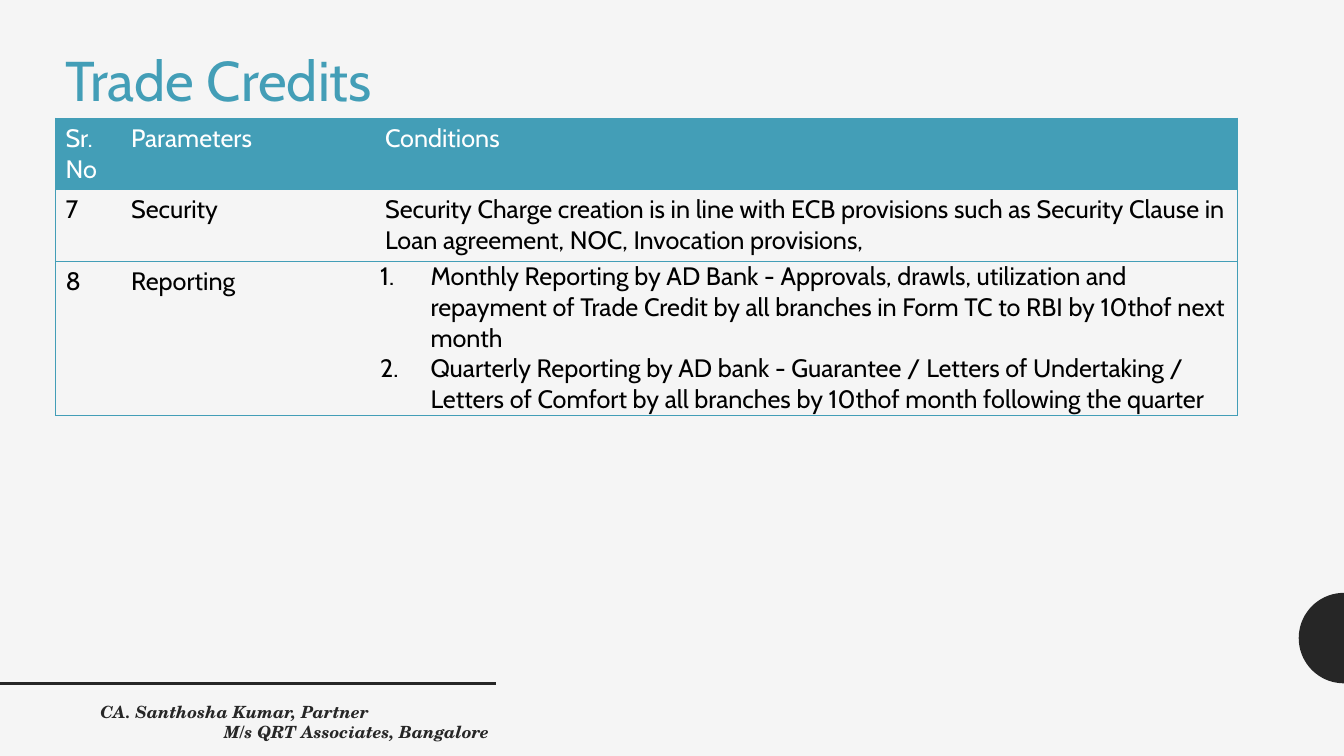
from math import cos, pi, sin

from lxml import etree
from pptx import Presentation
from pptx.dml.color import RGBColor
from pptx.enum.shapes import MSO_CONNECTOR
from pptx.enum.text import MSO_AUTO_SIZE, PP_ALIGN
from pptx.oxml.ns import qn
from pptx.util import Cm, Pt

LINE = MSO_CONNECTOR.STRAIGHT
GROW = MSO_AUTO_SIZE.SHAPE_TO_FIT_TEXT
LEFT, RIGHT = PP_ALIGN.LEFT, PP_ALIGN.RIGHT
PLAIN = "{2D5ABB26-0587-4C30-8999-92F81FD0307C}"

HUES = {"back": "F5F5F5", "dark": "262626", "teal": "439EB7",
        "white": "FFFFFF", "black": "000000"}
TITLE = {"name": "Cabin", "size": Pt(40)}
BODY = {"name": "Cabin", "size": Pt(18), "bold": False}
FOOT = {"name": "TeX Gyre Schola", "size": Pt(12), "bold": True, "italic": True}

COLS = (1.65, 6.4, 21.74)
ROWS = (1.8, 1.8, 3.77)
TERMS = (
    (["Sr. No"], ["Parameters"], ["Conditions"]),
    (["7"], ["Security"],
     ["Security Charge creation is in line with ECB provisions such as "
      "Security Clause in Loan agreement, NOC, Invocation provisions,"]),
    (["8"], ["Reporting"],
     ["Monthly Reporting by AD Bank - Approvals, drawls, utilization and "
      "repayment of Trade Credit by all branches in Form TC to RBI by "
      "10thof next month",
      "Quarterly Reporting by AD bank - Guarantee / Letters of Undertaking / "
      "Letters of Comfort by all branches by 10thof month following the quarter"]),
)


def rgb(hue):
    return RGBColor.from_string(HUES[hue])


def write(frame, lines, form, hue):
    """Put each line in its own paragraph and style it."""
    frame.word_wrap = True
    for i, line in enumerate(lines):
        para = frame.add_paragraph() if i else frame.paragraphs[0]
        run = para.add_run()
        run.text = line
        for key, value in form.items():
            setattr(run.font, key, value)
        run.font.color.rgb = rgb(hue)


def add_text(slide, area, lines, form, hue):
    box = slide.shapes.add_textbox(*map(Cm, area))
    write(box.text_frame, lines, form, hue)
    return box.text_frame


def add_half(slide, x, y, radius, steps=36):
    """Draw a half disc that opens to the right, centred on x, y."""
    turns = [pi / 2 + pi * i / steps for i in range(steps + 1)]
    dots = [(Cm(x + radius * cos(t)), Cm(y + radius * sin(t))) for t in turns]
    path = slide.shapes.build_freeform(*dots[0])
    path.add_line_segments(dots[1:], close=True)
    disc = path.convert_to_shape()
    disc.shadow.inherit = False
    disc.fill.solid()
    disc.fill.fore_color.rgb = rgb("dark")
    disc.line.fill.background()


def add_rule(slide, x, y, end):
    rule = slide.shapes.add_connector(LINE, Cm(x), Cm(y), Cm(end), Cm(y))
    rule.line.color.rgb = rgb("dark")
    rule.line.width = Pt(2)
    etree.SubElement(rule._element.spPr, qn("a:effectLst"))


def edge(cell, sides):
    """Draw thin borders on the given sides, in L, R, T, B order."""
    props = cell._tc.get_or_add_tcPr()
    for side in sides:
        line = etree.SubElement(props, qn(f"a:ln{side}"), w=str(Pt(0.5)))
        fill = etree.SubElement(line, qn("a:solidFill"))
        etree.SubElement(fill, qn("a:srgbClr"), val=HUES["teal"])


def number(cell):
    """Turn the paragraphs of a cell into a numbered list."""
    margins = {"margin_left": 0.13, "margin_right": 0.13,
               "margin_top": 0, "margin_bottom": 0}
    for key, value in margins.items():
        setattr(cell, key, Cm(value))
    for para in cell.text_frame.paragraphs:
        props = para._p.get_or_add_pPr()
        props.set("marL", str(Cm(1.27)))
        props.set("indent", str(-Cm(1.27)))
        etree.SubElement(props, qn("a:buAutoNum"), type="arabicPeriod")


def add_terms(slide, x, y):
    table = slide.shapes.add_table(
        len(ROWS), len(COLS), Cm(x), Cm(y), Cm(sum(COLS)), Cm(sum(ROWS))).table
    table._tbl.tblPr.find(qn("a:tableStyleId")).text = PLAIN
    table.horz_banding = False
    for col, width in zip(table.columns, COLS):
        col.width = Cm(width)
    for row, height in zip(table.rows, ROWS):
        row.height = Cm(height)
    for r, row in enumerate(TERMS):
        for c, lines in enumerate(row):
            cell = table.cell(r, c)
            sides = {0: "L", len(COLS) - 1: "R"}.get(c, "") + "TB"
            edge(cell, sides)
            if r:
                cell.fill.background()
            else:
                cell.fill.solid()
                cell.fill.fore_color.rgb = rgb("teal")
            write(cell.text_frame, lines, BODY, "black" if r else "white")
            if len(lines) > 1:
                number(cell)


def main():
    deck = Presentation()
    deck.slide_width, deck.slide_height = Cm(33.87), Cm(19.05)
    slide = deck.slides.add_slide(deck.slide_layouts[6])
    slide.background.fill.solid()
    slide.background.fill.fore_color.rgb = rgb("back")

    add_half(slide, 33.87, 16.08, 1.14)
    add_rule(slide, 0, 17.22, 12.5)
    add_terms(slide, 1.4, 2.97)
    title = add_text(slide, (1.4, 1.02, 16.38, 1.96), ["Trade Credits"],
                     TITLE, "teal")
    title.auto_size = GROW
    foot = add_text(slide, (2.11, 17.55, 10.59, 1.02),
                    ["CA. Santhosha Kumar, Partner", "M/s QRT Associates, Bangalore"],
                    FOOT, "dark")
    foot.margin_left, foot.margin_right = Cm(0.42), Cm(0.37)
    for para, side in zip(foot.paragraphs, (LEFT, RIGHT)):
        para.alignment = side
    deck.save("out.pptx")


if __name__ == "__main__":
    main()
